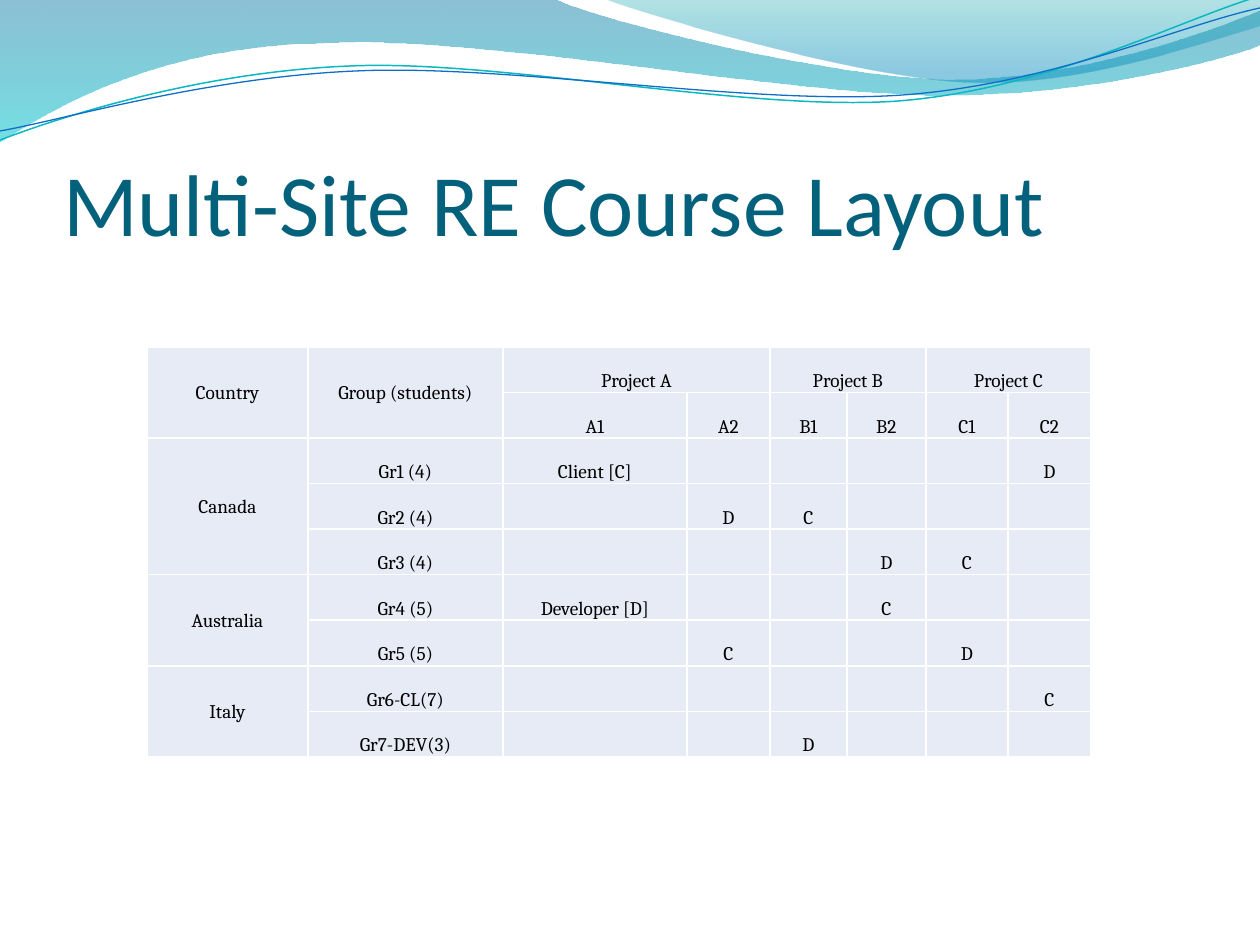
"""Builds the multi-site course layout slide: wave banner, title and project table."""
from pptx import Presentation
from pptx import util as u
from pptx.dml import color
from pptx.enum import text
from pptx.oxml import ns
from lxml import etree

PX = 914400 / 126


def px(n):
    return u.Emu(round(n * PX))


def rgb(value):
    return color.RGBColor.from_string(value)


def assign(target, values):
    for name, value in values.items():
        setattr(target, name, value)


def sub(parent, tag, **attrs):
    return etree.SubElement(parent, ns.qn(tag), attrs)


class Deck:
    """Holds the style and the current slide."""
    TITLE = {"name": "Calibri", "size": u.Pt(50)}
    CELL = {"name": "Cambria", "size": u.Pt(11)}
    CELL_INSETS = {"margin_left": px(1), "margin_right": px(1),
                   "margin_top": px(1), "margin_bottom": 0}
    TITLE_COLOR, CELL_COLOR, CELL_FILL, GRID = "04617B", "000000", "E7EBF5", "FFFFFF"

    def __init__(self):
        self.prs = Presentation()
        assign(self.prs, {"slide_width": px(1260), "slide_height": px(945)})
        self.s = self.prs.slides.add_slide(self.prs.slide_layouts[5])

    def curve(self, start, segments, close):
        points = [pt for seg in segments for pt in zip(seg[::2], seg[1::2])]
        fb = self.s.shapes.build_freeform(*start, scale=PX)
        fb.add_line_segments(points, close=close)
        sp = fb.convert_to_shape()
        sp.shadow.inherit = False
        lines = iter(list(sp._element.iter(ns.qn("a:lnTo"))))
        for seg in segments:
            nodes = [next(lines) for _ in range(len(seg) // 2)]
            if len(nodes) == 3:
                bezier = etree.Element(ns.qn("a:cubicBezTo"))
                nodes[0].addprevious(bezier)
                for node in nodes:
                    bezier.append(node[0])
                    node.getparent().remove(node)
        return sp

    def band(self, start, segments, stops):
        sp = self.curve(start, segments, True)
        sp.line.fill.background()
        sp.fill.gradient()
        sp.fill.gradient_angle = 270
        for stop, (position, value, _) in zip(sp.fill.gradient_stops, stops):
            stop.position = position
            stop.color.rgb = rgb(value)
        for clr, (_, _, alpha) in zip(sp._element.iter(ns.qn("a:srgbClr")), stops):
            sub(clr, "a:alpha", val=str(alpha * 1000))

    def wave(self, start, segments, value, width):
        sp = self.curve(start, segments, False)
        sp.fill.background()
        sp.line.color.rgb = rgb(value)
        sp.line.width = u.Pt(width)

    def label(self, p, words, font, value, align):
        p.alignment = align
        r = p.add_run()
        r.text = words
        assign(r.font, font)
        r.font.color.rgb = rgb(value)

    def title(self, words, left, top, width, height):
        sp = self.s.shapes.title
        self.s.shapes._spTree.append(sp._element)
        assign(sp, {"left": px(left), "top": px(top),
                    "width": px(width), "height": px(height)})
        tf = sp.text_frame
        assign(tf, {"margin_left": 0, "margin_right": 0, "margin_top": u.Inches(0.05),
                    "margin_bottom": 0, "word_wrap": True,
                    "auto_size": text.MSO_AUTO_SIZE.NONE,
                    "vertical_anchor": text.MSO_ANCHOR.BOTTOM})
        self.label(tf.paragraphs[0], words, self.TITLE, self.TITLE_COLOR,
                   text.PP_ALIGN.LEFT)

    def cell(self, cell, words):
        assign(cell, self.CELL_INSETS)
        cell.vertical_anchor = text.MSO_ANCHOR.BOTTOM
        tc_pr = cell._tc.get_or_add_tcPr()
        for side in ("a:lnL", "a:lnR", "a:lnT", "a:lnB"):
            fill = sub(sub(tc_pr, side, w=str(u.Pt(1))), "a:solidFill")
            sub(fill, "a:srgbClr", val=self.GRID)
        cell.fill.solid()
        cell.fill.fore_color.rgb = rgb(self.CELL_FILL)
        if words:
            self.label(cell.text_frame.paragraphs[0], words, self.CELL,
                       self.CELL_COLOR, text.PP_ALIGN.CENTER)

    def table(self, rows, widths, left, top, height, spans):
        table = self.s.shapes.add_table(len(rows), len(widths), px(left), px(top),
                                        px(sum(widths)), px(height)).table
        assign(table, {"first_row": False, "horz_banding": False})
        for column, width in zip(table.columns, widths):
            column.width = px(width)
        for i, row in enumerate(rows):
            for j, words in enumerate(row):
                self.cell(table.cell(i, j), words)
        for row, col, down, across in spans:
            origin = table.cell(row, col)
            origin.merge(table.cell(row + down - 1, col + across - 1))
            if down > 1:
                origin.vertical_anchor = text.MSO_ANCHOR.MIDDLE


ROWS = [
    ["Country", "Group (students)", "Project A", "", "Project B", "", "Project C", ""],
    ["", "", "A1", "A2", "B1", "B2", "C1", "C2"],
    ["Canada", "Gr1 (4)", "Client [C]", "", "", "", "", "D"],
    ["", "Gr2 (4)", "", "D", "C", "", "", ""],
    ["", "Gr3 (4)", "", "", "", "D", "C", ""],
    ["Australia", "Gr4 (5)", "Developer [D]", "", "", "C", "", ""],
    ["", "Gr5 (5)", "", "C", "", "", "D", ""],
    ["Italy", "Gr6-CL(7)", "", "", "", "", "", "C"],
    ["", "Gr7-DEV(3)", "", "", "D", "", "", ""],
]
WIDTHS = [161, 195, 184, 83, 77, 79, 82, 83]
COUNTRY_SPANS = [(2, 0, 3, 1), (5, 0, 2, 1), (7, 0, 2, 1)]
HEADER_SPANS = [(0, col, 2, 1) for col in (0, 1)] + [(0, col, 1, 2) for col in (2, 4, 6)]


def main():
    deck = Deck()
    deck.band((0, 0), [(554, -1), (600, 21, 837, 79, 955, 79),
                       (1075, 79, 1207, 33, 1260, 11), (1261, 45),
                       (1239, 55, 1096, 96, 940, 95), (784, 95, 481, 35, 324, 43),
                       (163, 45, 58, 105, -1, 142)],
              [(0, "0074A1", 45), (1, "00C6CF", 55)])
    deck.band((604, -1), [(641, 14, 859, 78, 969, 82),
                          (1079, 87, 1211, 40, 1260, 26), (1260, 0)],
              [(0, "00A1A9", 30), (0.8, "008BBF", 45)])
    deck.wave((0, 140), [(60, 117, 199, 72, 349, 66), (498, 59, 747, 112, 898, 101),
                         (1050, 89, 1182, 19, 1257, -3)], "0AB8BF", 0.85)
    deck.wave((0, 131), [(59, 121, 207, 77, 357, 71), (508, 64, 752, 106, 903, 95),
                         (1053, 84, 1177, 26, 1260, 8)], "0F6FC6", 0.75)
    deck.title("Multi-Site RE Course Layout", 63, 97, 1134, 157)
    deck.table(ROWS, WIDTHS, 147, 347, 410, HEADER_SPANS + COUNTRY_SPANS)
    deck.prs.save("out.pptx")


if __name__ == "__main__":
    main()
